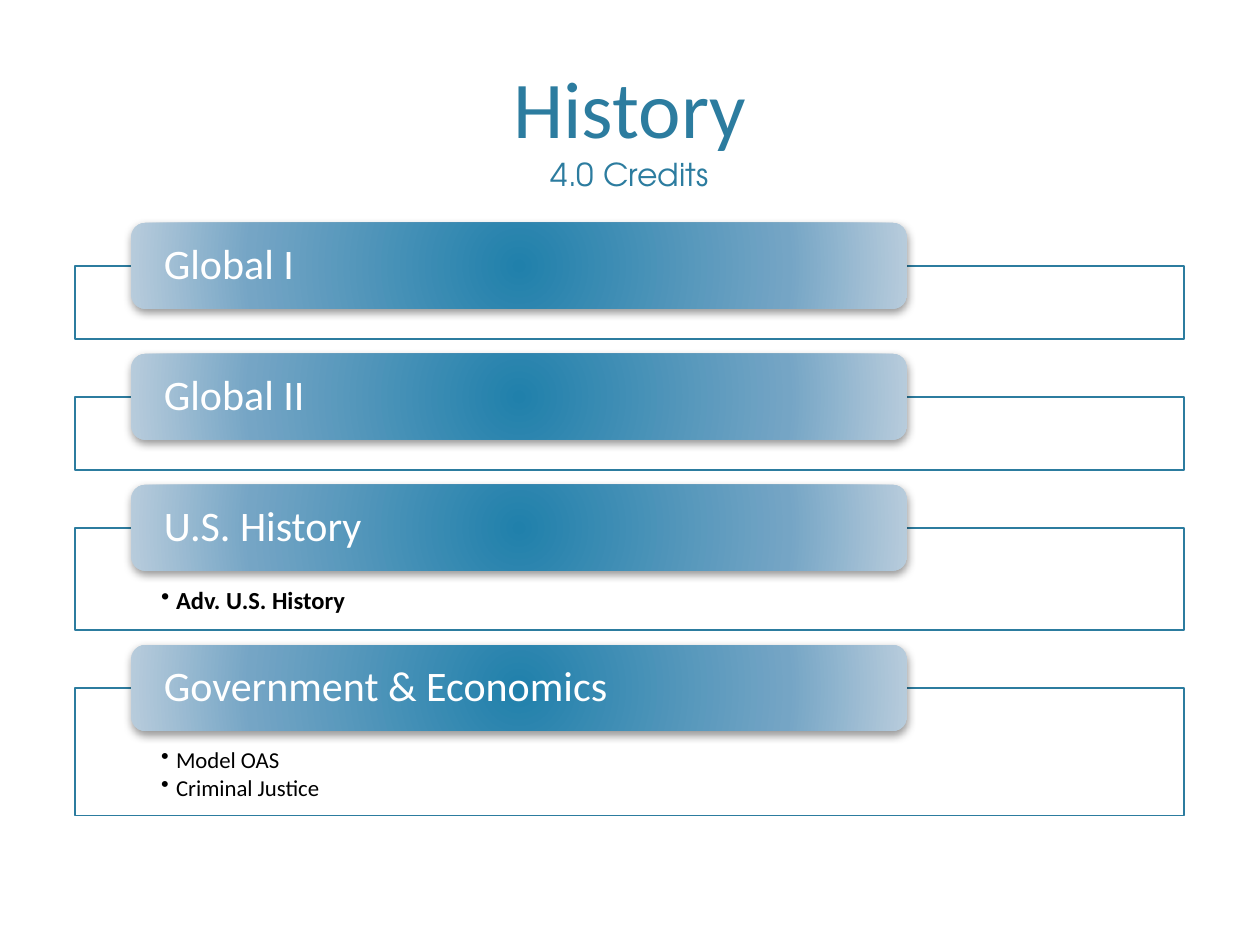
"""Build the History credits slide with a stack of labelled course frames."""

from pptx import Presentation
from pptx.dml.color import RGBColor
from pptx.enum.shapes import MSO_SHAPE
from pptx.enum.text import MSO_ANCHOR, PP_ALIGN
from pptx.oxml import parse_xml
from pptx.oxml.ns import nsdecls, qn
from pptx.util import Cm, Pt
from lxml.etree import SubElement

TITLE_LINES = [("History", "Calibri", 46), ("4.0 Credits", "TeX Gyre Adventor", 18)]
COURSES = [
    {"name": "Global I", "height": 1.47, "options": []},
    {"name": "Global II", "height": 1.47, "options": []},
    {"name": "U.S. History", "height": 2.06, "options": ["Adv. U.S. History"], "size": 14, "bold": True},
    {"name": "Government & Economics", "height": 2.57, "options": ["Model OAS", "Criminal Justice"], "size": 13, "bold": False},
]

TEAL = RGBColor(0x2C, 0x7C, 0x9F)
WHITE = RGBColor(0xFF, 0xFF, 0xFF)
BLACK = RGBColor(0x00, 0x00, 0x00)
BAR_STOPS = [
    (0, RGBColor(0x20, 0x80, 0xAB)),
    (69, RGBColor(0x75, 0xA5, 0xC5)),
    (100, RGBColor(0xB8, 0xCC, 0xDC)),
]

LEFT, WIDTH = 1.52, 22.35
FIRST_FRAME_TOP, FRAME_GAP = 5.36, 1.17
BAR_LEFT, BAR_WIDTH, BAR_HEIGHT = 2.64, 15.65, 1.73


def add_text(paragraph, text, font_name, size, color, bold=False):
    run = paragraph.add_run()
    run.text = text
    run.font.name = font_name
    run.font.size = Pt(size)
    run.font.color.rgb = color
    run.font.bold = bold


def set_margins(text_frame, side, top, bottom):
    text_frame.word_wrap = True
    text_frame.margin_left = text_frame.margin_right = Cm(side)
    text_frame.margin_top, text_frame.margin_bottom = Cm(top), Cm(bottom)


def add_bullet(paragraph):
    properties = paragraph._p.get_or_add_pPr()
    properties.set("marL", str(Cm(0.3)))
    properties.set("indent", str(-Cm(0.3)))
    SubElement(properties, qn("a:buChar")).set("char", "•")


def add_title(slide):
    title = slide.shapes.add_textbox(Cm(LEFT), Cm(0.3), Cm(WIDTH), Cm(3.71))
    text_frame = title.text_frame
    text_frame.word_wrap = True
    text_frame.vertical_anchor = MSO_ANCHOR.BOTTOM
    paragraph = text_frame.paragraphs[0]
    paragraph.alignment = PP_ALIGN.CENTER
    for index, (text, font_name, size) in enumerate(TITLE_LINES):
        if index:
            paragraph.add_line_break()
        add_text(paragraph, text, font_name, size, TEAL)


def add_frame(slide, top, course):
    frame = slide.shapes.add_shape(
        MSO_SHAPE.RECTANGLE, Cm(LEFT), Cm(top), Cm(WIDTH), Cm(course["height"])
    )
    frame.shadow.inherit = False
    frame.fill.solid()
    frame.fill.fore_color.rgb = WHITE
    color = frame._element.spPr.find(qn("a:solidFill"))[0]
    SubElement(color, qn("a:alpha")).set("val", "90000")
    frame.line.color.rgb = TEAL
    frame.line.width = Pt(1)
    text_frame = frame.text_frame
    set_margins(text_frame, 1.73, 1.22, 0.27)
    text_frame.vertical_anchor = MSO_ANCHOR.TOP
    for index, option in enumerate(course["options"]):
        paragraph = text_frame.add_paragraph() if index else text_frame.paragraphs[0]
        paragraph.alignment = PP_ALIGN.LEFT
        paragraph.level = 1
        paragraph.line_spacing = 0.9
        paragraph.space_after = Pt(2)
        add_bullet(paragraph)
        add_text(paragraph, option, "Calibri", course["size"], BLACK, course["bold"])


def style_bar(bar):
    stops = "".join(
        f'<a:gs pos="{position * 1000}"><a:srgbClr val="{color}"/></a:gs>'
        for position, color in BAR_STOPS
    )
    gradient = parse_xml(
        f'<a:gradFill {nsdecls("a")} rotWithShape="1"><a:gsLst>{stops}</a:gsLst>'
        '<a:path path="circle"><a:fillToRect l="100000" t="100000" r="100000" b="100000"/>'
        "</a:path></a:gradFill>"
    )
    shadow = parse_xml(
        f'<a:outerShdw {nsdecls("a")} blurRad="{Pt(5)}" dist="{Pt(2)}" dir="5400000" '
        'rotWithShape="0"><a:srgbClr val="000000"><a:alpha val="40000"/></a:srgbClr></a:outerShdw>'
    )
    bar.line.fill.background()
    bar.shadow.inherit = False
    properties = bar._element.spPr
    properties.find(qn("a:prstGeom")).addnext(gradient)
    properties.find(qn("a:effectLst")).append(shadow)


def add_bar(slide, frame_top, name):
    bar = slide.shapes.add_shape(
        MSO_SHAPE.ROUNDED_RECTANGLE,
        Cm(BAR_LEFT), Cm(frame_top - BAR_HEIGHT / 2), Cm(BAR_WIDTH), Cm(BAR_HEIGHT),
    )
    style_bar(bar)
    text_frame = bar.text_frame
    set_margins(text_frame, 0.58, 0, 0)
    text_frame.vertical_anchor = MSO_ANCHOR.MIDDLE
    paragraph = text_frame.paragraphs[0]
    paragraph.alignment = PP_ALIGN.LEFT
    paragraph.line_spacing = 0.9
    add_text(paragraph, name, "Calibri", 24, WHITE)


def main():
    presentation = Presentation()
    presentation.slide_width, presentation.slide_height = Cm(25.4), Cm(19.05)
    slide = presentation.slides.add_slide(presentation.slide_layouts[6])
    add_title(slide)
    top = FIRST_FRAME_TOP
    for course in COURSES:
        add_frame(slide, top, course)
        add_bar(slide, top, course["name"])
        top += course["height"] + FRAME_GAP
    presentation.save("out.pptx")


if __name__ == "__main__":
    main()
